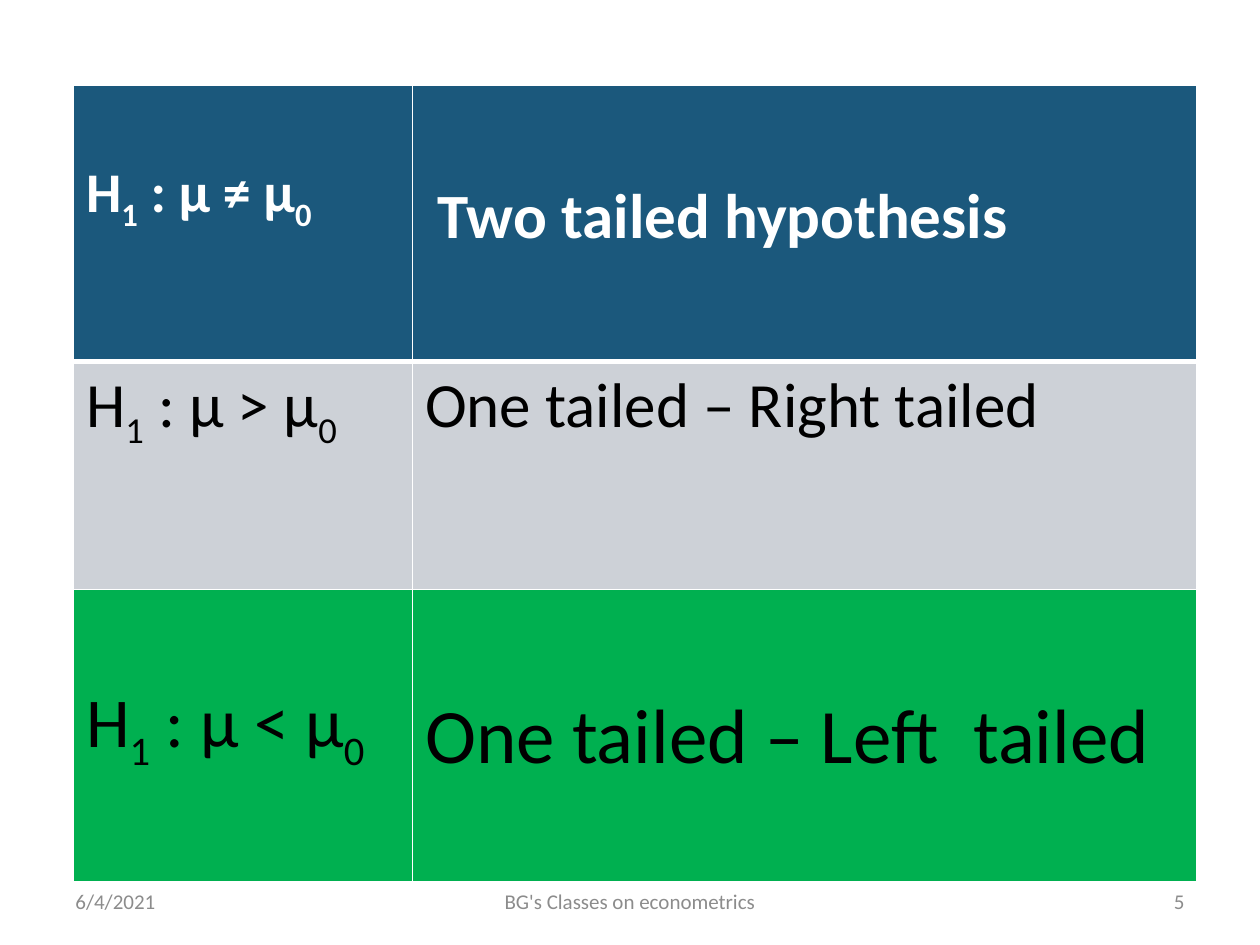
from dataclasses import dataclass

from lxml import etree
from pptx import Presentation
from pptx.dml.color import RGBColor
from pptx.enum.text import MSO_ANCHOR, PP_ALIGN
from pptx.oxml.ns import qn
from pptx.util import Pt

LEFT, CENTER, RIGHT = PP_ALIGN.LEFT, PP_ALIGN.CENTER, PP_ALIGN.RIGHT
MIDDLE = MSO_ANCHOR.MIDDLE

WHITE = RGBColor(0xFF, 0xFF, 0xFF)
BLACK = RGBColor(0x00, 0x00, 0x00)
NAVY = RGBColor(0x1B, 0x58, 0x7C)
SILVER = RGBColor(0xCD, 0xD1, 0xD7)
GREEN = RGBColor(0x00, 0xB0, 0x50)
GRAY = RGBColor(0x8C, 0x8C, 0x8C)

FONT = "Calibri"
LINE_HEIGHT = 1.22
INSET_X, INSET_Y = 7.2, 3.6
SUBSCRIPT = "-25000"
COLUMN_WIDTHS = (193.7, 448.3)


@dataclass(frozen=True)
class Entry:
    pieces: tuple[str, ...]
    size: float
    lead: float = 0
    left: float = INSET_X
    right: float = INSET_X
    inset_y: float = INSET_Y


@dataclass(frozen=True)
class Hypothesis:
    height: float
    fill: RGBColor
    color: RGBColor
    bold: bool
    top_line: float
    bottom_line: float
    entries: tuple[Entry, Entry]


@dataclass(frozen=True)
class FooterItem:
    text: str
    left: float
    width: float
    align: PP_ALIGN


def alternative(sign: str) -> tuple[str, ...]:
    return "H", "1", f" : μ {sign} μ", "0"


HYPOTHESES = (
    Hypothesis(158, NAVY, WHITE, True, 1, 3, (
        Entry(alternative("≠"), 32, lead=32),
        Entry(("Two tailed hypothesis",), 36, lead=44, left=14.4, right=21.6, inset_y=0),
    )),
    Hypothesis(130.5, SILVER, BLACK, False, 3, 1, (
        Entry(alternative(">"), 36),
        Entry(("One tailed – Right tailed",), 36),
    )),
    Hypothesis(167, GREEN, BLACK, False, 1, 1, (
        Entry(alternative("<"), 40, lead=40),
        Entry(("One tailed – Left  tailed",), 44, lead=44),
    )),
)

FOOTER = (
    FooterItem("6/4/2021", 36, 168, LEFT),
    FooterItem("5", 516, 168, RIGHT),
    FooterItem("BG's Classes on econometrics", 246, 228, CENTER),
)


def add_run(paragraph, text: str, size: float, color: RGBColor, bold: bool = False):
    run = paragraph.add_run()
    run.text = text
    for attribute, value in {"name": FONT, "size": Pt(size), "bold": bold}.items():
        setattr(run.font, attribute, value)
    run.font.color.rgb = color
    return run


def draw_borders(cell, row: Hypothesis) -> None:
    properties = cell._tc.get_or_add_tcPr()
    widths = {"a:lnL": 1, "a:lnR": 1, "a:lnT": row.top_line, "a:lnB": row.bottom_line}
    for tag, width in widths.items():
        line = etree.SubElement(properties, qn(tag), w=str(Pt(width)))
        solid = etree.SubElement(line, qn("a:solidFill"))
        etree.SubElement(solid, qn("a:srgbClr"), val=str(WHITE))


def fill_cell(cell, entry: Entry, row: Hypothesis) -> None:
    margins = {
        "margin_left": entry.left,
        "margin_right": entry.right,
        "margin_top": entry.inset_y + entry.lead * LINE_HEIGHT,
        "margin_bottom": entry.inset_y,
    }
    for attribute, value in margins.items():
        setattr(cell, attribute, Pt(value))
    draw_borders(cell, row)
    cell.fill.solid()
    cell.fill.fore_color.rgb = row.fill
    paragraph = cell.text_frame.paragraphs[0]
    for index, piece in enumerate(entry.pieces):
        run = add_run(paragraph, piece, entry.size, row.color, row.bold)
        if index % 2:
            run._r.get_or_add_rPr().set("baseline", SUBSCRIPT)


def add_hypotheses(slide) -> None:
    height = sum(row.height for row in HYPOTHESES)
    table = slide.shapes.add_table(
        len(HYPOTHESES), len(COLUMN_WIDTHS),
        Pt(42), Pt(48.5), Pt(sum(COLUMN_WIDTHS)), Pt(height),
    ).table
    for column, width in zip(table.columns, COLUMN_WIDTHS):
        column.width = Pt(width)
    for table_row, row in zip(table.rows, HYPOTHESES):
        table_row.height = Pt(row.height)
        for cell, entry in zip(table_row.cells, row.entries):
            fill_cell(cell, entry, row)


def add_footer_item(slide, item: FooterItem) -> None:
    frame = slide.shapes.add_textbox(
        Pt(item.left), Pt(500.5), Pt(item.width), Pt(28.75)
    ).text_frame
    for attribute, value in {"word_wrap": True, "vertical_anchor": MIDDLE}.items():
        setattr(frame, attribute, value)
    paragraph = frame.paragraphs[0]
    paragraph.alignment = item.align
    add_run(paragraph, item.text, 12, GRAY)


def main() -> None:
    deck = Presentation()
    deck.slide_width, deck.slide_height = Pt(720), Pt(540)
    slide = deck.slides.add_slide(deck.slide_layouts[6])
    add_hypotheses(slide)
    for item in FOOTER:
        add_footer_item(slide, item)
    deck.save("out.pptx")


if __name__ == "__main__":
    main()
